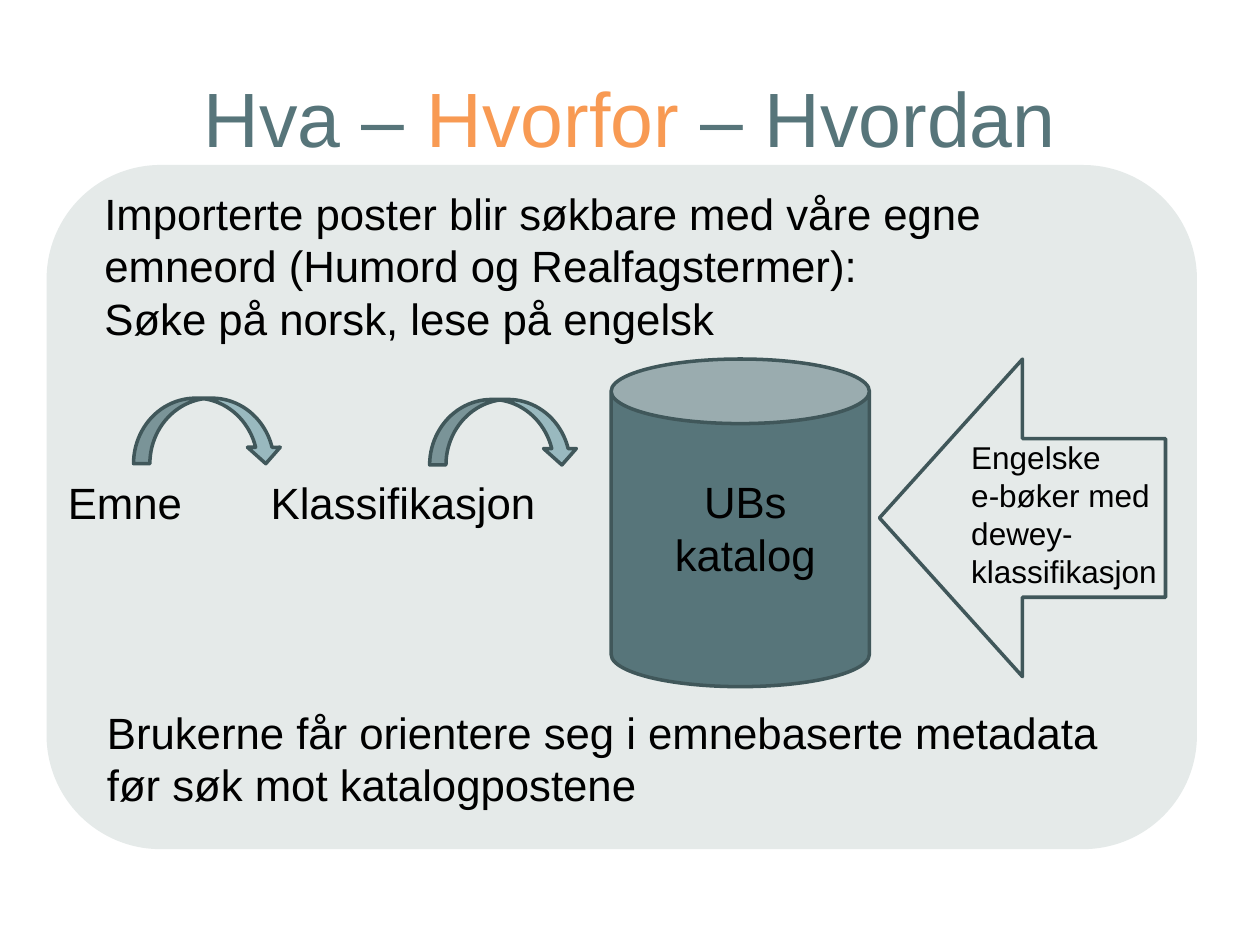
from pptx import Presentation
from pptx import util as u
from pptx.dml.color import RGBColor
from pptx.enum import shapes, text

PX = 9144  # EMU per px, 100 px to the inch
COLOURS = {
    "panel": "E5EAE9",
    "teal": "57757A",
    "outline": "40575A",
    "light": "99B9BF",
    "accent": "F89A53",
    "ink": "000000",
}
SHAPE = shapes.MSO_SHAPE
ALIGN = text.PP_ALIGN


def colour(name):
    return RGBColor.from_string(COLOURS[name])


class SlideBuilder:
    font = "Arial"
    body_size = 25

    def __init__(self, slide):
        self.slide = slide

    def box(self, *lengths):
        return [u.Emu(length * PX) for length in lengths]

    def style(self, run, size, ink):
        run.font.name = self.font
        run.font.size = u.Pt(size)
        run.font.color.rgb = colour(ink)

    def title(self, at, parts, size):
        title = self.slide.shapes.title
        title.left, title.top, title.width, title.height = self.box(*at)
        frame = title.text_frame
        frame.vertical_anchor = text.MSO_ANCHOR.MIDDLE
        paragraph = frame.paragraphs[0]
        paragraph.alignment = ALIGN.CENTER
        for words, ink in parts:
            run = paragraph.add_run()
            run.text = words
            self.style(run, size, ink)

    def shape(self, kind, at, fill, outline=None, rotation=0):
        shape = self.slide.shapes.add_shape(kind, *self.box(*at))
        shape.shadow.inherit = False
        shape.rotation = rotation
        shape.fill.solid()
        shape.fill.fore_color.rgb = colour(fill)
        if outline:
            shape.line.color.rgb = colour(outline)
            shape.line.width = u.Pt(2)
        else:
            shape.line.fill.background()
        return shape

    def label(self, at, words, size=body_size, align=ALIGN.LEFT):
        frame = self.slide.shapes.add_textbox(*self.box(*at)).text_frame
        frame.word_wrap = True
        frame.auto_size = text.MSO_AUTO_SIZE.SHAPE_TO_FIT_TEXT
        frame.text = words
        paragraph = frame.paragraphs[0]
        paragraph.alignment = align
        for run in paragraph.runs:
            self.style(run, size, "ink")


def main():
    deck = Presentation()
    deck.slide_width, deck.slide_height = u.Inches(10), u.Inches(7.5)
    title_only = deck.slide_layouts[5]
    page = SlideBuilder(deck.slides.add_slide(title_only))

    # Background panel, sent behind the title
    panel = page.shape(SHAPE.ROUNDED_RECTANGLE, (37, 131, 913, 543), "panel")
    page.slide.shapes._spTree.insert(2, panel._element)

    # Title and introduction
    page.title((50, 30, 900, 125),
               [("Hva – ", "teal"), ("Hvorfor", "accent"), (" – Hvordan", "teal")], 44)
    page.label((73, 143, 961, 178),
               "Importerte poster blir søkbare med våre egne \v"
               "emneord (Humord og Realfagstermer):\v"
               "Søke på norsk, lese på engelsk")

    # Catalogue and the books flowing into it
    page.shape(SHAPE.CAN, (485, 285, 205, 260), "teal", "outline")
    page.shape(SHAPE.RIGHT_ARROW, (698, 285, 227, 252), "panel", "outline", 180)
    page.label((505, 372, 173, 94), "UBs katalog", align=ALIGN.CENTER)
    page.label((761, 343, 189, 131), "Engelske \ve-bøker med dewey-klassifikasjon", 18)

    # Conclusion
    page.label((75, 555, 819, 136),
               "Brukerne får orientere seg i emnebaserte metadata \v"
               "før søk mot katalogpostene")

    # Search steps leading to the catalogue
    for left, width, step in [(44, 157, "Emne"), (205, 247, "Klassifikasjon")]:
        page.label((left, 373, width, 52), step)
    for left, top in [(106, 316), (341, 317)]:
        page.shape(SHAPE.CURVED_DOWN_ARROW, (left, top, 118, 52), "light", "outline")

    deck.save("out.pptx")


if __name__ == "__main__":
    main()
